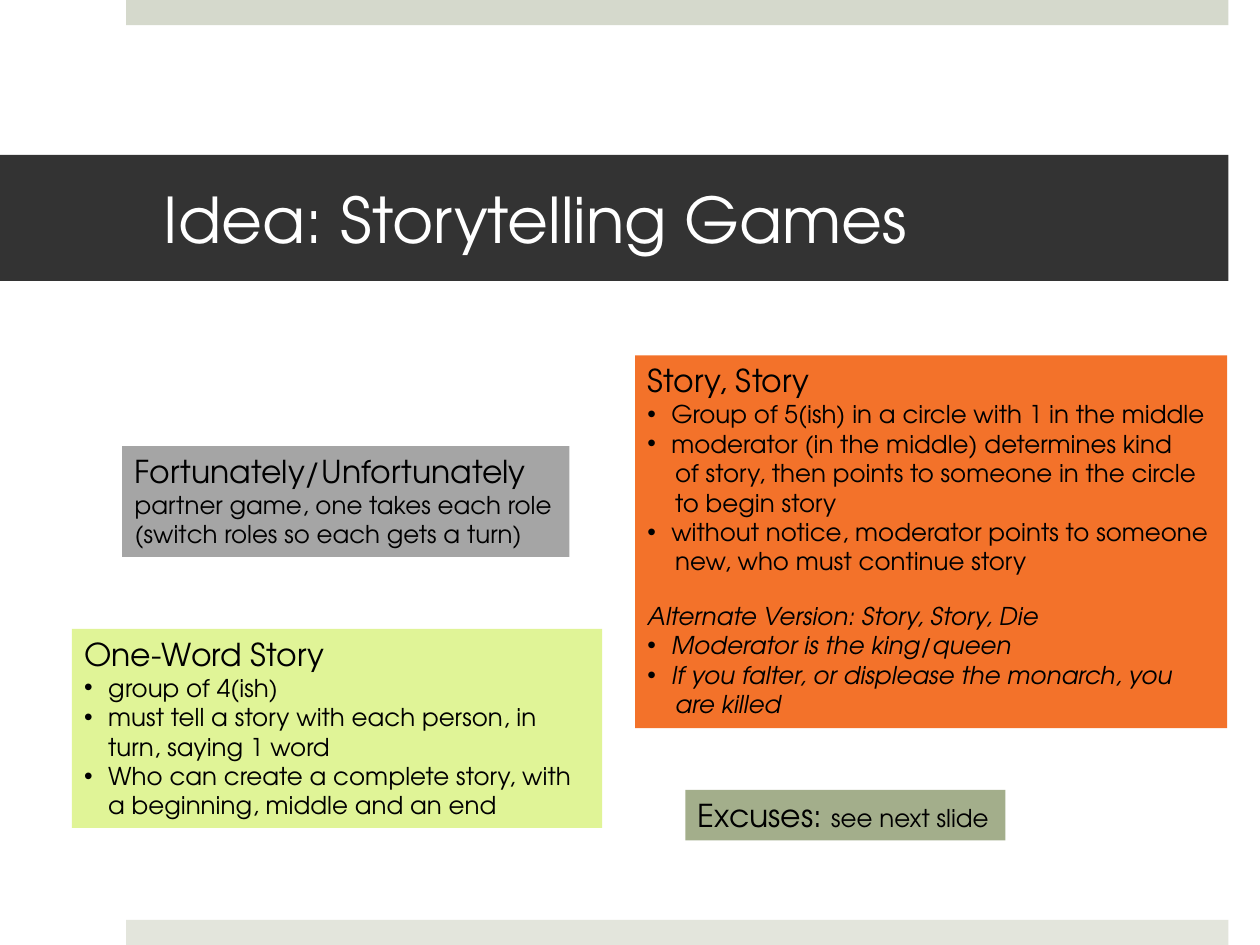
import pptx
import pptx.util
import pptx.dml.color
import pptx.enum.shapes
import pptx.enum.text
from lxml import etree
from pptx.oxml.ns import qn

Inches, Pt = pptx.util.Inches, pptx.util.Pt

THEME = {
    "font": "TeX Gyre Adventor",
    "title": 36, "heading": 18, "body": 14,
    "dark": "333333", "white": "FFFFFF", "black": "000000",
    "top": "D5D9CC", "bottom": "E3E5DC",
    "gray": "A5A5A5", "orange": "F3722A", "lime": "E0F497", "sage": "A3AE8B",
}

# Content: each card has a box, a heading and lines of (style, text)
W, H = 10, 7.5
RIGHT = 0.975 * W
BAR_H = 0.2
TITLE = "Idea: Storytelling Games"
CARDS = [
    {"box": (0.97, 3.54, 3.55, 0.88), "fill": "gray",
     "heading": "Fortunately/Unfortunately",
     "lines": [("plain", "partner game, one takes each role"),
               ("plain", "(switch roles so each gets a turn)")]},
    {"box": (5.04, 2.82, 4.7, 2.96), "fill": "orange",
     "heading": "Story, Story",
     "lines": [("bullet", "Group of 5(ish) in a circle with 1 in the middle"),
               ("bullet", "moderator (in the middle) determines kind"),
               ("hang", "of story, then points to someone in the circle"),
               ("hang", "to begin story"),
               ("bullet", "without notice, moderator points to someone"),
               ("hang", "new, who must continue story"),
               ("break italic", "Alternate Version: Story, Story, Die"),
               ("bullet italic", "Moderator is the king/queen"),
               ("bullet italic", "If you falter, or displease the monarch, you"),
               ("hang italic", "are killed")]},
    {"box": (0.57, 4.99, 4.21, 1.58), "fill": "lime",
     "heading": "One-Word Story",
     "lines": [("bullet", "group of 4(ish)"),
               ("bullet", "must tell a story with each person, in turn, saying 1 word"),
               ("bullet", "Who can create a complete story, with a beginning, "
                          "middle and an end")]},
    {"box": (5.44, 6.27, 2.54, 0.4), "fill": "sage",
     "heading": "Excuses: ", "lines": [("inline", "see next slide")]},
]
# Left margin and first-line indent by paragraph style
INDENTS = {"bullet": (0.19, -0.19), "hang": (0.22, 0)}
BREAK_GAP = 14.4


def color(name):
    return pptx.dml.color.RGBColor.from_string(THEME[name])


def paint(shape, name):
    shape.fill.solid()
    shape.fill.fore_color.rgb = color(name)
    shape.line.fill.background()


def add_run(p, text, size, ink="black", italic=False):
    r = p.add_run()
    r.text = text
    r.font.name, r.font.size = THEME["font"], Pt(THEME[size])
    r.font.color.rgb = color(ink)
    if italic:
        r.font.italic = True


def set_indent(p, style):
    left, first = INDENTS[style]
    pPr = p._p.get_or_add_pPr()
    pPr.set("marL", str(Inches(left)))
    pPr.set("indent", str(Inches(first)))
    if style == "bullet":
        etree.SubElement(pPr, qn("a:buFont")).set("typeface", "Arial")
        etree.SubElement(pPr, qn("a:buChar")).set("char", "•")


def add_bar(s, top, fill):
    bar = s.shapes.add_shape(pptx.enum.shapes.MSO_SHAPE.RECTANGLE, Inches(W / 10),
                             Inches(top), Inches(RIGHT - W / 10), Inches(BAR_H))
    bar.shadow.inherit = False
    paint(bar, fill)


def add_card(s, card):
    sp = s.shapes.add_textbox(*map(Inches, card["box"]))
    paint(sp, card["fill"])
    tf = sp.text_frame
    tf.word_wrap = True
    tf.auto_size = pptx.enum.text.MSO_AUTO_SIZE.SHAPE_TO_FIT_TEXT
    p = tf.paragraphs[0]
    add_run(p, card["heading"], "heading")
    for styles, text in card["lines"]:
        style, *extra = styles.split()
        if style != "inline":
            p = tf.add_paragraph()
        if style == "break":
            p.space_before = Pt(BREAK_GAP)
        if style in INDENTS:
            set_indent(p, style)
        add_run(p, text, "body", italic="italic" in extra)


def add_title(s):
    sp = s.shapes.title
    sp.left, sp.top, sp.width, sp.height = map(Inches, (0, 1.23, RIGHT, 1))
    paint(sp, "dark")
    tf = sp.text_frame
    tf.word_wrap = True
    tf.vertical_anchor = pptx.enum.text.MSO_ANCHOR.MIDDLE
    tf.margin_left, tf.margin_right = Inches(1.3), Inches(0.3)
    p = tf.paragraphs[0]
    p.alignment = pptx.enum.text.PP_ALIGN.LEFT
    add_run(p, TITLE, "title", "white")


def main():
    prs = pptx.Presentation()
    prs.slide_width, prs.slide_height = Inches(W), Inches(H)
    s = prs.slides.add_slide(prs.slide_layouts[5])  # Title Only
    # Frame bars, title band, game cards
    add_bar(s, 0, "top")
    add_bar(s, H - BAR_H, "bottom")
    add_title(s)
    for card in CARDS:
        add_card(s, card)
    prs.save("out.pptx")


if __name__ == "__main__":
    main()
